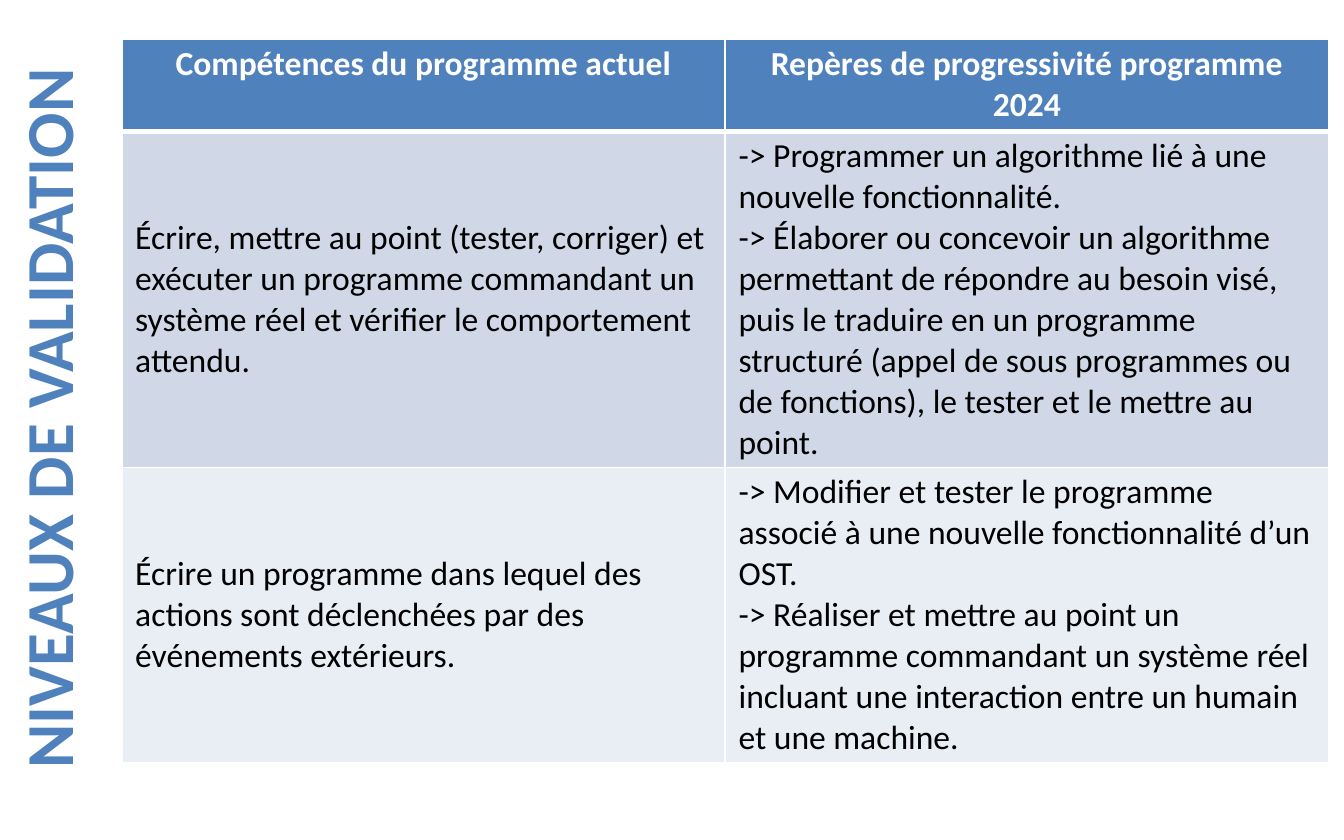
from pptx import Presentation
from pptx.dml.color import RGBColor
from pptx.enum.text import MSO_ANCHOR, MSO_AUTO_SIZE, PP_ALIGN
from pptx.oxml import parse_xml
from pptx.oxml.ns import nsdecls
from pptx.util import Pt

PX = 9525
BLUE = RGBColor(0x4F, 0x81, 0xBD)
WHITE = RGBColor(0xFF, 0xFF, 0xFF)
BLACK = RGBColor(0, 0, 0)
DARK = RGBColor(0xD0, 0xD8, 0xE8)
PALE = RGBColor(0xE9, 0xED, 0xF4)


def write(frame, lines, align, style):
    frame.text = "\n".join(lines)
    for para in frame.paragraphs:
        para.alignment = align
        font = para.runs[0].font
        font.color.rgb = style["color"]
        for key in ("name", "size", "bold"):
            setattr(font, key, style[key])


def edge(cell, sides):
    props = cell._tc.get_or_add_tcPr()
    for spot, (side, width) in enumerate(sides.items()):
        props.insert(spot, parse_xml(
            f'<a:ln{side} {nsdecls("a")} w="{Pt(width)}"><a:solidFill>'
            f'<a:srgbClr val="{WHITE}"/></a:solidFill></a:ln{side}>'))


deck = Presentation()
deck.slide_width, deck.slide_height = 960 * PX, 600 * PX
slide = deck.slides.add_slide(deck.slide_layouts[6])

title = slide.shapes.add_textbox(-267 * PX, 265 * PX, 602 * PX, 68 * PX)
title.rotation = 270
title.text_frame.word_wrap = True
title.text_frame.auto_size = MSO_AUTO_SIZE.SHAPE_TO_FIT_TEXT
write(title.text_frame, ["NIVEAUX DE VALIDATION"], PP_ALIGN.CENTER,
      {"name": "Calibri", "size": Pt(36), "bold": True, "color": BLUE})

rows = [
    (66, BLUE, [
        ["Compétences du programme actuel"],
        ["Repères de progressivité programme 2024"],
    ]),
    (240, DARK, [
        ["Écrire, mettre au point (tester, corriger) et exécuter un programme "
         "commandant un système réel et vérifier le comportement attendu."],
        ["-> Programmer un algorithme lié à une nouvelle fonctionnalité.",
         "-> Élaborer ou concevoir un algorithme permettant de répondre au "
         "besoin visé, puis le traduire en un programme structuré (appel de "
         "sous programmes ou de fonctions), le tester et le mettre au point."],
    ]),
    (211, PALE, [
        ["Écrire un programme dans lequel des actions sont déclenchées par "
         "des événements extérieurs."],
        ["-> Modifier et tester le programme associé à une nouvelle "
         "fonctionnalité d’un OST.",
         "-> Réaliser et mettre au point un programme commandant un système "
         "réel incluant une interaction entre un humain et une machine."],
    ]),
]
total = sum(row[0] for row in rows)
grid = slide.shapes.add_table(3, 2, 87 * PX, 28 * PX, 862 * PX, total * PX).table

for i, (height, fill, texts) in enumerate(rows):
    grid.rows[i].height = height * PX
    head = i == 0
    style = {"name": "Calibri", "size": Pt(18), "bold": head,
             "color": WHITE if head else BLACK}
    form = {"margin_top": 3 * PX, "margin_bottom": 3 * PX,
            "vertical_anchor": MSO_ANCHOR.TOP if head else MSO_ANCHOR.MIDDLE}
    for j, lines in enumerate(texts):
        cell = grid.cell(i, j)
        for key, value in form.items():
            setattr(cell, key, value)
        cell.fill.solid()
        cell.fill.fore_color.rgb = fill
        edge(cell, {"L": 1, "R": 1, "T": 3 if i == 1 else 1, "B": 3 if head else 1})
        write(cell.text_frame, lines, PP_ALIGN.CENTER if head else PP_ALIGN.LEFT, style)

deck.save("out.pptx")
